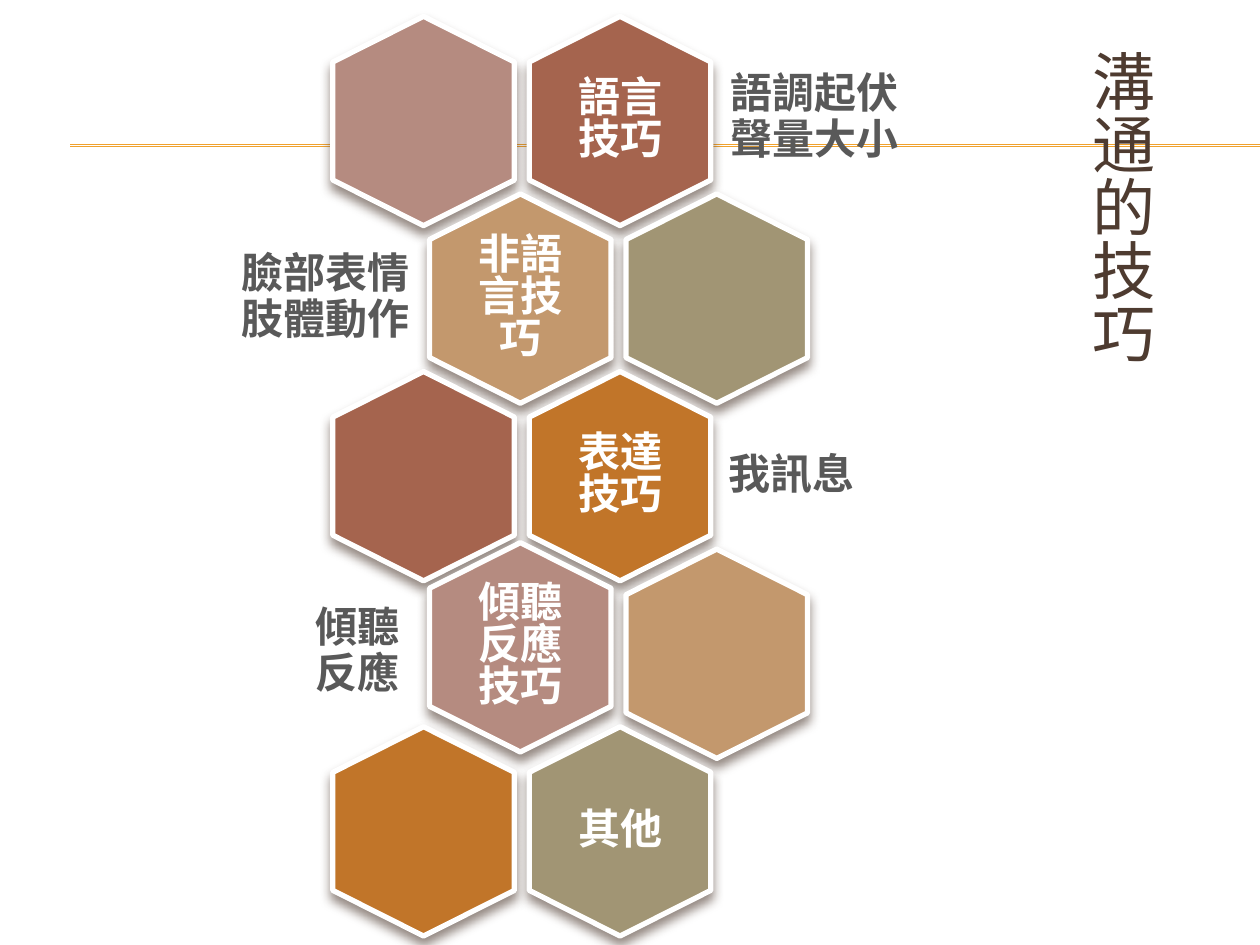
import pptx
import pptx.util
import pptx.dml.color
import pptx.enum.shapes
import pptx.enum.text
import pptx.oxml
import pptx.oxml.ns

Cm, Pt = pptx.util.Cm, pptx.util.Pt
ALIGN = pptx.enum.text.PP_ALIGN
MIDDLE = pptx.enum.text.MSO_ANCHOR.MIDDLE
FONT = "Noto Sans CJK SC"
NS = pptx.oxml.ns.nsdecls("a")

HEX = {
    "rust": "A5644E", "rose": "B58B80", "tan": "C3986D", "sage": "A19574",
    "amber": "C17529", "gold": "F0A22E", "brown": "4E3B30",
    "gray": "595959", "white": "FFFFFF",
}

TITLE = "溝通的技巧"
# row, column, colour, text, line spacing, shift down in cm
CELLS = [
    (0, 1, "rust", "語言技巧", Pt(24), 0),
    (0, 0, "rose", "", None, 0),
    (1, 0, "tan", "非語言技巧", Pt(24), 0),
    (1, 1, "sage", "", None, 0),
    (2, 1, "amber", "表達技巧", Pt(24), 0),
    (2, 0, "rust", "", None, 0),
    (3, 0, "rose", "傾聽反應技巧", Pt(24), -0.13),
    (3, 1, "tan", "", None, 0),
    (4, 1, "sage", "其他", 0.9, 0),
    (4, 0, "amber", "", None, 0),
]
# left, top, width in cm, text, alignment
NOTES = [
    (14.48, 1.12, 4.62, "語調起伏聲量大小", ALIGN.LEFT),
    (3.96, 4.75, 4.55, "臉部表情肢體動作", ALIGN.RIGHT),
    (14.43, 8.33, 4.70, "我訊息", ALIGN.LEFT),
    (5.61, 11.89, 2.69, "傾聽反應", ALIGN.RIGHT),
]
NOTE_H = 2.51
RULES = (2.92, 2.95)

HEX_W, HEX_H, SLOPE = 3.66, 4.22, 0.92
LEFT, TOP = 6.71, 0.33
STEP_X, STEP_Y, SHIFT = 3.96, 3.58, 1.95


def color(name):
    return pptx.dml.color.RGBColor.from_string(HEX[name])


def apply(item, values):
    for name, value in values.items():
        setattr(item, name, value)


def write(shape, text, size, ink, bold, align, space, pad_x, pad_y):
    frame = shape.text_frame
    apply(frame, {
        "word_wrap": True, "vertical_anchor": MIDDLE,
        "auto_size": pptx.enum.text.MSO_AUTO_SIZE.NONE,
        "margin_left": Cm(pad_x), "margin_right": Cm(pad_x),
        "margin_top": Cm(pad_y), "margin_bottom": Cm(pad_y),
    })
    para = frame.paragraphs[0]
    apply(para, {"alignment": align, "line_spacing": space})
    run = para.add_run()
    run.text = text
    apply(run.font, {"name": FONT, "size": Pt(size), "bold": bold})
    run.font.color.rgb = color(ink)
    # East Asian glyphs take their face from a:ea
    run.font._element.find(pptx.oxml.ns.qn("a:latin")).addnext(
        pptx.oxml.parse_xml(f'<a:ea {NS} typeface="{FONT}"/>'))


def effect(shape, body=""):
    shape.element.spPr.append(
        pptx.oxml.parse_xml(f"<a:effectLst {NS}>{body}</a:effectLst>"))


def rule(slide, y):
    line = slide.shapes.add_connector(
        pptx.enum.shapes.MSO_CONNECTOR.STRAIGHT,
        Cm(1.42), Cm(y), Cm(25.4), Cm(y))
    line.line.color.rgb = color("gold")
    line.line.width = Pt(0.75)
    effect(line)
    slide.shapes.title.element.addprevious(line.element)


def cell(slide, row, col, fill, text, space, down):
    x = LEFT + col * STEP_X + row % 2 * SHIFT
    y = TOP + row * STEP_Y + down
    mid, right, low = x + HEX_W / 2, x + HEX_W, y + HEX_H
    points = [(right, y + SLOPE), (right, low - SLOPE), (mid, low),
              (x, low - SLOPE), (x, y + SLOPE)]
    path = slide.shapes.build_freeform(Cm(mid), Cm(y))
    path.add_line_segments([(Cm(a), Cm(b)) for a, b in points], close=True)
    shape = path.convert_to_shape()
    shape.fill.solid()
    shape.fill.fore_color.rgb = color(fill)
    shape.line.color.rgb = color("white")
    shape.line.width = Pt(3)
    effect(shape, f'<a:outerShdw blurRad="{Pt(6)}" dist="{Pt(4)}" '
           f'dir="5400000" rotWithShape="0"><a:srgbClr val="{HEX["brown"]}">'
           '<a:alpha val="60000"/></a:srgbClr></a:outerShdw>')
    if text:
        write(shape, text, 24, "white", True, ALIGN.CENTER, space, 0.81, 0.91)


def note(slide, x, y, width, text, align):
    box = slide.shapes.add_textbox(Cm(x), Cm(y), Cm(width), Cm(NOTE_H))
    write(box, text, 24, "gray", True, align, 0.9, 0.25, 0.25)


def main():
    deck = pptx.Presentation()
    apply(deck, {"slide_width": Cm(25.4), "slide_height": Cm(19.05)})
    slide = deck.slides.add_slide(deck.slide_layouts[5])

    title = slide.shapes.title
    apply(title, {"left": Cm(21.11), "top": Cm(0.76),
                  "width": Cm(3.02), "height": Cm(14.17)})
    write(title, TITLE, 36, "brown", False, ALIGN.LEFT, 1.0, 0.13, 0.25)
    title.text_frame._txBody.bodyPr.set("vert", "eaVert")

    for y in RULES:
        rule(slide, y)
    for item in CELLS:
        cell(slide, *item)
    for item in NOTES:
        note(slide, *item)
    deck.save("out.pptx")


if __name__ == "__main__":
    main()
